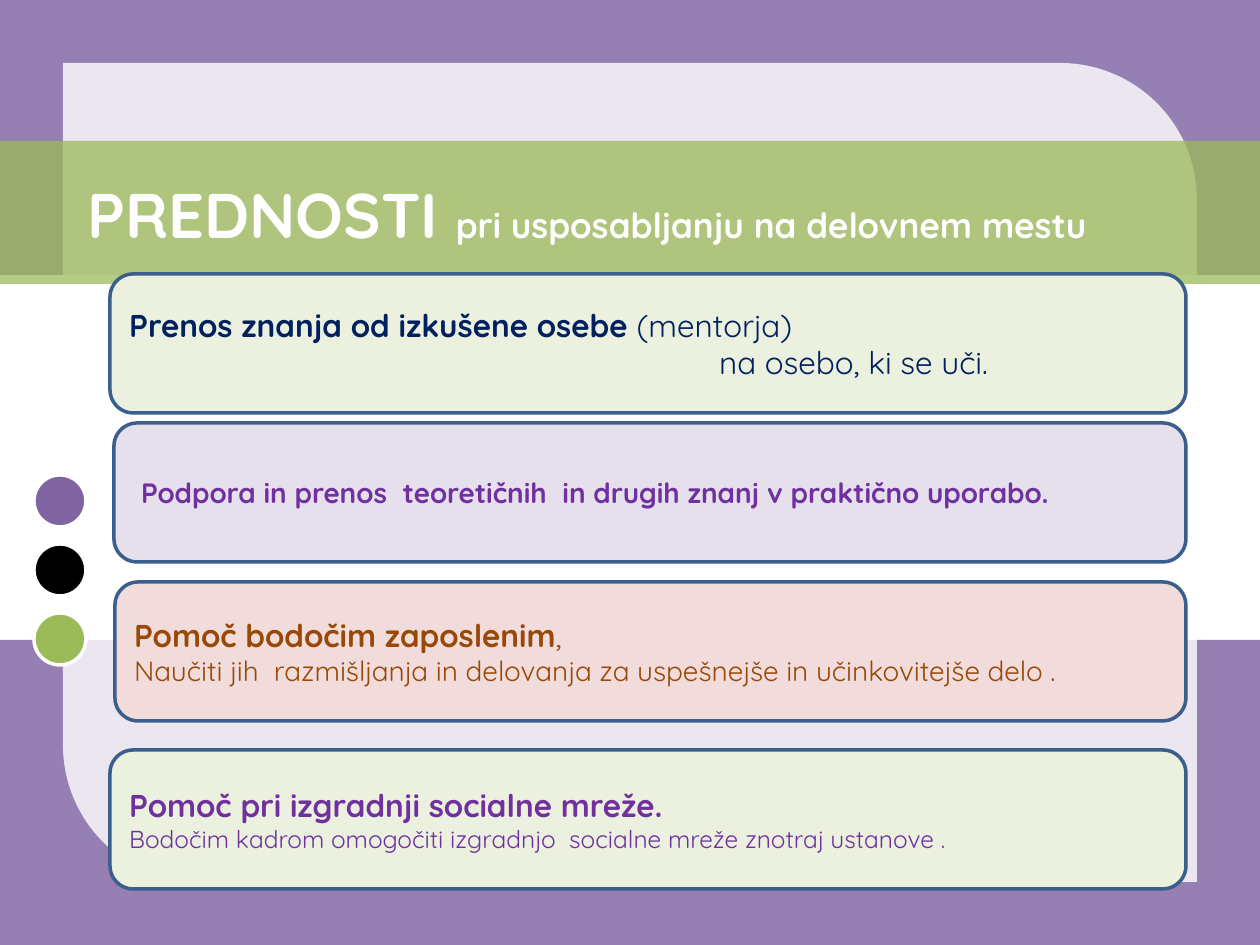
from pptx import Presentation
from pptx.dml.color import RGBColor
from pptx.enum.shapes import MSO_SHAPE
from pptx.enum.text import MSO_ANCHOR
from pptx.oxml.ns import qn
from pptx.util import Pt
from lxml.etree import SubElement

SCALE = 914400 / 126
FONT = "Quicksand"
PURPLE, GREEN, WHITE, BLACK = "8064A2", "9BBB59", "FFFFFF", "000000"
CARD_LINE = "3A5F8C"
CARD_RIGHT, CARD_HEIGHT = 1186, 139

BACKDROP = [
    (MSO_SHAPE.RECTANGLE, (0, 0, 1260, 275), PURPLE, 82),
    (MSO_SHAPE.RECTANGLE, (0, 640, 1260, 305), PURPLE, 82),
    (MSO_SHAPE.ROUND_2_DIAG_RECTANGLE, (63, 63, 1134, 819), WHITE, 81),
    (MSO_SHAPE.RECTANGLE, (0, 141, 1260, 143), GREEN, 75),
]
DOTS = [PURPLE, BLACK, GREEN]
TITLE = [(0, [("PREDNOSTI ", 36, True),
              ("pri usposabljanju na delovnem mestu", 20, True)])]
CARDS = [
    (110, 274, "EBF1DE", "002060", [
        (0, [("Prenos znanja od izkušene osebe ", 18, True), ("(mentorja)", 18, False)]),
        (590, [("na osebo, ki se uči.", 18, False)]),
    ]),
    (114, 423, "E6E0EC", "7030A0", [
        (8, [("Podpora in prenos  teoretičnih  in drugih znanj v praktično uporabo.", 16, True)]),
    ]),
    (115, 582, "F2DCDB", "984807", [
        (0, [("Pomoč bodočim zaposlenim", 18, True), (",", 18, False)]),
        (0, [("Naučiti jih  razmišljanja in delovanja za uspešnejše in učinkovitejše delo .", 16, False)]),
    ]),
    (110, 750, "EBF1DE", "7030A0", [
        (0, [("Pomoč pri izgradnji socialne mreže.", 18, True)]),
        (0, [("Bodočim kadrom omogočiti izgradnjo  socialne mreže znotraj ustanove .", 14, False)]),
    ]),
]


def px(value):
    return round(value * SCALE)


def color(code):
    return RGBColor.from_string(code)


def add_shape(page, kind, area, fill, line=None, opacity=100):
    shape = page.shapes.add_shape(kind, *map(px, area))
    shape.shadow.inherit = False
    shape.fill.solid()
    shape.fill.fore_color.rgb = color(fill)
    if opacity < 100:
        tint = shape.fill._xPr.find(qn("a:solidFill"))[0]
        SubElement(tint, qn("a:alpha")).set("val", str(opacity * 1000))
    if line:
        shape.line.color.rgb = color(line)
        shape.line.width = Pt(2)
    else:
        shape.line.fill.background()
    return shape


def write(box, paragraphs, text_color, anchor):
    frame = box.text_frame
    frame.word_wrap = True
    frame.vertical_anchor = anchor
    for index, (indent, spans) in enumerate(paragraphs):
        para = frame.add_paragraph() if index else frame.paragraphs[0]
        properties = para._p.get_or_add_pPr()
        properties.set("algn", "l")
        properties.set("marL", str(px(indent)))
        for text, size, bold in spans:
            span = para.add_run()
            span.text = text
            span.font.name = FONT
            span.font.size = Pt(size)
            span.font.bold = bold
            span.font.color.rgb = color(text_color)


def main():
    deck = Presentation()
    deck.slide_width, deck.slide_height = px(1260), px(945)
    page = deck.slides.add_slide(deck.slide_layouts[6])

    for kind, area, fill, opacity in BACKDROP:
        shape = add_shape(page, kind, area, fill, opacity=opacity)
        if kind == MSO_SHAPE.ROUND_2_DIAG_RECTANGLE:
            shape.adjustments[0] = 0
            shape.adjustments[1] = 0.167

    for index, fill in enumerate(DOTS):
        add_shape(page, MSO_SHAPE.OVAL, (34, 475 + 69 * index, 52, 52), fill, WHITE)

    title = page.shapes.add_textbox(*map(px, (75, 155, 1134, 102)))
    write(title, TITLE, WHITE, MSO_ANCHOR.BOTTOM)

    for left, top, fill, text_color, paragraphs in CARDS:
        area = (left, top, CARD_RIGHT - left, CARD_HEIGHT)
        card = add_shape(page, MSO_SHAPE.ROUNDED_RECTANGLE, area, fill, CARD_LINE)
        write(card, paragraphs, text_color, MSO_ANCHOR.MIDDLE)

    deck.save("out.pptx")


if __name__ == "__main__":
    main()
